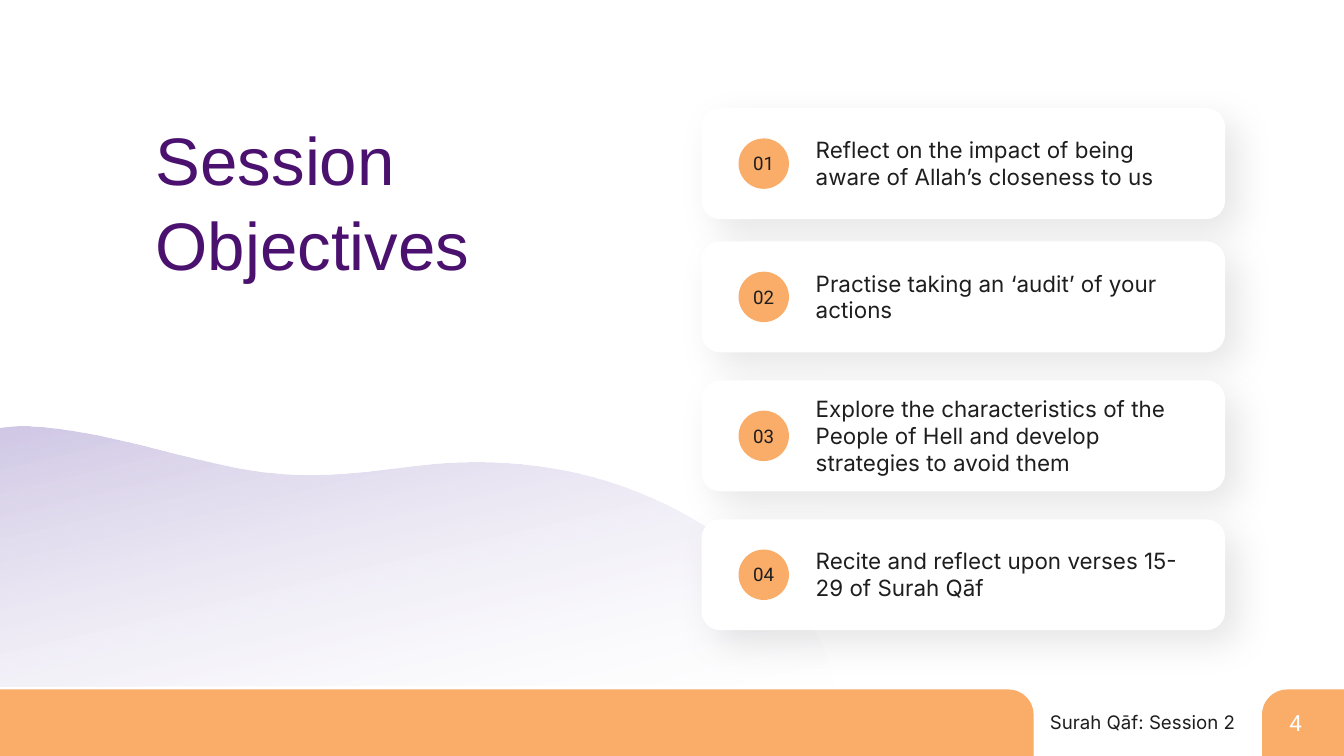
import math
from dataclasses import dataclass
from typing import Union

import lxml.etree
import pptx
import pptx.dml.color
import pptx.enum.shapes
import pptx.enum.text
import pptx.oxml.ns
import pptx.shapes.autoshape
import pptx.shapes.shapetree
import pptx.util

Pt = pptx.util.Pt
Kind = pptx.enum.shapes.MSO_SHAPE
Align = pptx.enum.text.PP_ALIGN
Shapes = Union[pptx.shapes.shapetree.SlideShapes, pptx.shapes.shapetree.GroupShapes]
Shape = pptx.shapes.autoshape.Shape
Point = tuple[float, float]

COLORS = {
    "orange": "FAAC69",
    "purple": "4B116F",
    "lilac": "C3B8DE",
    "ink": "1E1E1E",
    "white": "FFFFFF",
    "black": "000000",
}

CARD_LEFT, CARD_WIDTH, CARD_HEIGHT = 751.7, 560.9, 118.8
BADGE_LEFT, BADGE_SIZE = 791.3, 54
NUMBER_HEIGHT = 31.7
OBJECTIVE_LEFT, OBJECTIVE_WIDTH = 866.9, 411

WAVE_ROTATION = -13.3
WAVE_CENTER = (415.1, 603.4)
WAVE_START = (18.7, 456.5)
# Each curve: two control points and an end point
WAVE_CURVES = [
    ((91.4, 454.3), (187.9, 489.6), (263.5, 502.6)),
    ((355, 518.4), (414.7, 499), (488.2, 495.4)),
    ((560.9, 491.8), (646.6, 503.3), (730.1, 548.6)),
    ((802.8, 587.5), (873.4, 650.9), (891.4, 720.7)),
]
WAVE_CORNERS = [(893.5, 733.7), (-1.4, 735.8), (-0.7, 458.6), (2.2, 457.9)]
CURVE_STEPS = 16


@dataclass
class Objective:
    number: str
    text: str
    top: float
    text_height: float = 65.5


OBJECTIVES = [
    Objective("01", "Reflect on the impact of being aware of Allah’s closeness to us", 115.9),
    Objective("02", "Practise taking an ‘audit’ of your actions", 258.7),
    Objective(
        "03",
        "Explore the characteristics of the People of Hell and develop strategies to avoid them",
        407.6,
        text_height=94.3,
    ),
    Objective("04", "Recite and reflect upon verses 15-29 of Surah Qāf", 556.4),
]


def rgb(name: str) -> pptx.dml.color.RGBColor:
    return pptx.dml.color.RGBColor.from_string(COLORS[name])


def add_block(shapes: Shapes, kind: Kind, left: float, top: float,
              width: float, height: float, color: str) -> Shape:
    """Add a flat preset shape without outline or shadow."""
    block = shapes.add_shape(kind, Pt(left), Pt(top), Pt(width), Pt(height))
    block.shadow.inherit = False
    block.fill.solid()
    block.fill.fore_color.rgb = rgb(color)
    block.line.fill.background()
    return block


def add_text(shapes: Shapes, text: str, left: float, top: float, width: float, height: float,
             *, font: str, size: float, color: str = "ink", align: Align = Align.LEFT,
             spacing: float = 1, inset_top: float = 3.6) -> Shape:
    """Add a text box with one paragraph for each line of text."""
    box = shapes.add_textbox(Pt(left), Pt(top), Pt(width), Pt(height))
    frame = box.text_frame
    frame.word_wrap = True
    frame.auto_size = pptx.enum.text.MSO_AUTO_SIZE.SHAPE_TO_FIT_TEXT
    frame.margin_top = Pt(inset_top)
    frame.text = text
    for para in frame.paragraphs:
        para.alignment = align
        para.line_spacing = spacing
        for span in para.runs:
            span.font.name = font
            span.font.size = Pt(size)
            span.font.color.rgb = rgb(color)
    return box


def add_soft_shadow(block: Shape) -> None:
    qn = pptx.oxml.ns.qn
    effects = block.element.spPr.find(qn("a:effectLst"))
    shadow = lxml.etree.SubElement(
        effects, qn("a:outerShdw"), blurRad=str(Pt(40)), dist=str(Pt(20)),
        dir=str(45 * 60000), algn="tl", rotWithShape="0")
    color = lxml.etree.SubElement(shadow, qn("a:srgbClr"), val=COLORS["black"])
    lxml.etree.SubElement(color, qn("a:alpha"), val="10000")


def bezier(start: Point, control1: Point, control2: Point, end: Point, t: float) -> Point:
    u = 1 - t
    x, y = (u**3 * a + 3 * u * u * t * b + 3 * u * t * t * c + t**3 * d
            for a, b, c, d in zip(start, control1, control2, end))
    return x, y


def level(point: Point) -> Point:
    """Turn a wave point back into the frame it has before the shape is rotated."""
    angle = math.radians(-WAVE_ROTATION)
    dx, dy = point[0] - WAVE_CENTER[0], point[1] - WAVE_CENTER[1]
    x = WAVE_CENTER[0] + dx * math.cos(angle) - dy * math.sin(angle)
    y = WAVE_CENTER[1] + dx * math.sin(angle) + dy * math.cos(angle)
    return Pt(x), Pt(y)


def add_wave(shapes: Shapes) -> None:
    outline = [WAVE_START]
    for curve in WAVE_CURVES:
        start = outline[-1]
        outline += [bezier(start, *curve, step / CURVE_STEPS)
                    for step in range(1, CURVE_STEPS + 1)]
    first, *rest = [level(point) for point in outline + WAVE_CORNERS]
    builder = shapes.build_freeform(*first)
    builder.add_line_segments(rest, close=True)
    wave = builder.convert_to_shape()
    wave.rotation = WAVE_ROTATION
    wave.shadow.inherit = False
    wave.line.fill.background()
    wave.fill.gradient()
    wave.fill.gradient_angle = 270
    for stop, position, color in zip(wave.fill.gradient_stops, (0, 1), ("lilac", "white")):
        stop.position = position
        stop.color.rgb = rgb(color)
    qn = pptx.oxml.ns.qn
    last_color = wave.element.spPr.findall(".//" + qn("a:srgbClr"))[-1]
    lxml.etree.SubElement(last_color, qn("a:alpha"), val="0")


def add_footer(shapes: Shapes) -> None:
    top, height = 738.7, 71.3
    page_tab = add_block(shapes, Kind.ROUND_1_RECTANGLE, 1352.2, top, 87.8, height, "orange")
    page_tab.element.spPr.xfrm.set("flipH", "1")
    bar = add_block(shapes, Kind.ROUND_1_RECTANGLE, 0, top, 1107.4, height, "orange")
    for block in (page_tab, bar):
        block.adjustments[0] = 0.38
    add_text(shapes, "Surah Qāf: Session 2", 1070.6, 758.2, 260, 31.7,
             font="Inter", size=20, align=Align.RIGHT)
    add_text(shapes, "4", 1374.5, 756, 43.9, 36, font="Roboto", size=24, color="white")


def add_objective(shapes: Shapes, objective: Objective) -> None:
    """Add a grouped card with a numbered badge and its objective."""
    card_shapes = shapes.add_group_shape().shapes
    middle = objective.top + CARD_HEIGHT / 2
    card = add_block(card_shapes, Kind.ROUNDED_RECTANGLE, CARD_LEFT, objective.top,
                     CARD_WIDTH, CARD_HEIGHT, "white")
    add_soft_shadow(card)
    add_block(card_shapes, Kind.OVAL, BADGE_LEFT, middle - BADGE_SIZE / 2,
              BADGE_SIZE, BADGE_SIZE, "orange")
    add_text(card_shapes, objective.number, BADGE_LEFT, middle - NUMBER_HEIGHT / 2,
             BADGE_SIZE, NUMBER_HEIGHT, font="Roboto", size=20, align=Align.CENTER)
    add_text(card_shapes, objective.text, OBJECTIVE_LEFT, middle - objective.text_height / 2,
             OBJECTIVE_WIDTH, objective.text_height, font="Inter", size=24)


def main() -> None:
    deck = pptx.Presentation()
    deck.slide_width, deck.slide_height = Pt(1440), Pt(810)
    page = deck.slides.add_slide(deck.slide_layouts[6])
    add_footer(page.shapes)
    add_wave(page.shapes)
    add_text(page.shapes, "Session\nObjectives", 159.8, 115.9, 591.8, 181.4,
             font="Arial", size=72, color="purple", spacing=1.05, inset_top=7)
    for objective in OBJECTIVES:
        add_objective(page.shapes, objective)
    deck.save("out.pptx")


if __name__ == "__main__":
    main()
